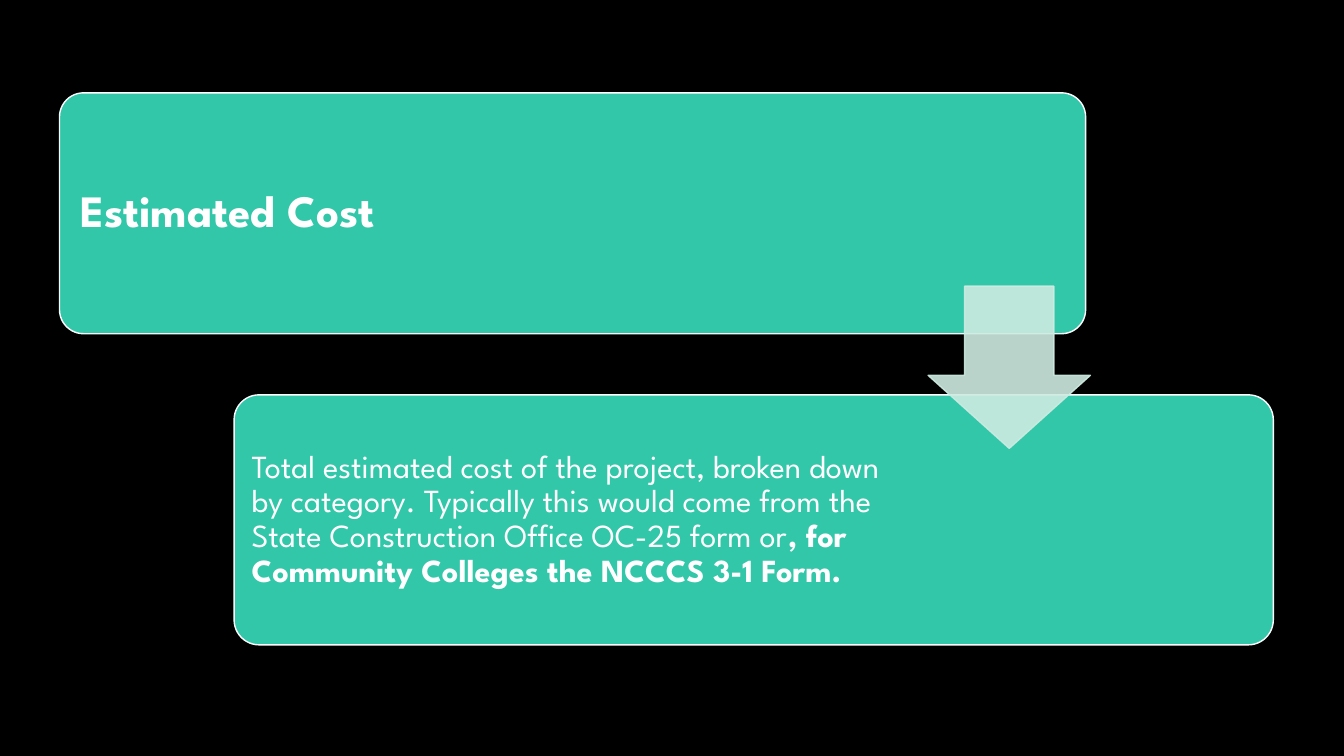
import pptx
import pptx.dml.color
import pptx.enum.shapes
import pptx.enum.text
import pptx.oxml
import pptx.oxml.ns
import pptx.util
from pptx.util import Cm

FONT = "League Spartan"
BLACK, WHITE, TEAL, MINT = "000000", "FFFFFF", "32C7A9", "CEEBE2"
SLIDE_SIZE = (33.87, 19.05)
TEXT_OFFSET = 0.19  # gap between a card's edge and its text area, in cm

# Each card: left, top, width, height, text width and inset in cm; size in points; (text, bold) runs
CARDS = [
    {"box": (1.5, 2.34, 25.86, 6.07), "text_width": 19.43, "inset": 0.33, "size": 32,
     "runs": [("Estimated Cost", True)]},
    {"box": (5.9, 9.95, 26.19, 6.3), "text_width": 17.12, "inset": 0.25, "size": 23,
     "runs": [("Total estimated cost of the project, broken down by category. Typically this "
               "would come from the State Construction Office OC-25 form or", False),
              (", for Community Colleges the NCCCS 3-1 Form.", True)]},
]
ARROW_BOX = (23.39, 7.21, 4.09, 4.09)
ARROW_OPACITY = 90


def colour(hex_text):
    return pptx.dml.color.RGBColor.from_string(hex_text)


def add_panel(slide, preset, box, adjustments, fill, line):
    shape = slide.shapes.add_shape(preset, *map(Cm, box))
    for index, value in enumerate(adjustments):
        shape.adjustments[index] = value
    shape.shadow.inherit = False
    shape.fill.solid()
    shape.fill.fore_color.rgb = colour(fill)
    shape.line.color.rgb = colour(line)
    shape.line.width = pptx.util.Pt(1)
    return shape


def fill_placeholder(placeholder, card):
    left, top, _, height = card["box"]
    placeholder.left, placeholder.top = Cm(left + TEXT_OFFSET), Cm(top + TEXT_OFFSET)
    placeholder.width, placeholder.height = Cm(card["text_width"]), Cm(height - 2 * TEXT_OFFSET)
    frame = placeholder.text_frame
    frame.word_wrap = True
    frame.auto_size = pptx.enum.text.MSO_AUTO_SIZE.NONE
    frame.vertical_anchor = pptx.enum.text.MSO_ANCHOR.MIDDLE
    frame.margin_left = frame.margin_right = Cm(card["inset"])
    frame.margin_top = frame.margin_bottom = Cm(card["inset"])

    paragraph = frame.paragraphs[0]
    properties = paragraph._p.get_or_add_pPr()
    properties.set("marL", "0")
    properties.set("indent", "0")
    pptx.oxml.ns.qn("a:buNone")
    properties.append(pptx.oxml.parse_xml(f'<a:buNone {pptx.oxml.ns.nsdecls("a")}/>'))
    paragraph.alignment = pptx.enum.text.PP_ALIGN.LEFT
    paragraph.line_spacing = 0.9
    paragraph.space_before = pptx.util.Pt(0)
    paragraph.font.name = FONT
    paragraph.font.size = pptx.util.Pt(card["size"])
    paragraph.font.color.rgb = colour(WHITE)
    for text, bold in card["runs"]:
        run = paragraph.add_run()
        run.text = text
        run.font.bold = bold


def main():
    presentation = pptx.Presentation()
    presentation.slide_width, presentation.slide_height = map(Cm, SLIDE_SIZE)
    slide = presentation.slides.add_slide(presentation.slide_layouts[1])
    slide.background.fill.solid()
    slide.background.fill.fore_color.rgb = colour(BLACK)

    # Cards, each placed behind its placeholder
    shapes = pptx.enum.shapes.MSO_SHAPE
    for card, placeholder in zip(CARDS, list(slide.placeholders)):
        panel = add_panel(slide, shapes.ROUNDED_RECTANGLE, card["box"], [0.1], TEAL, WHITE)
        placeholder._element.addprevious(panel._element)
        fill_placeholder(placeholder, card)

    # Translucent arrow from the heading to its explanation
    arrow = add_panel(slide, shapes.DOWN_ARROW, ARROW_BOX, [0.55, 0.45], MINT, MINT)
    # The preset stores shaft width first and head length second
    for shade in arrow._element.spPr.iter(pptx.oxml.ns.qn("a:srgbClr")):
        shade.append(pptx.oxml.parse_xml(
            f'<a:alpha {pptx.oxml.ns.nsdecls("a")} val="{ARROW_OPACITY * 1000}"/>'))

    presentation.save("out.pptx")


if __name__ == "__main__":
    main()
